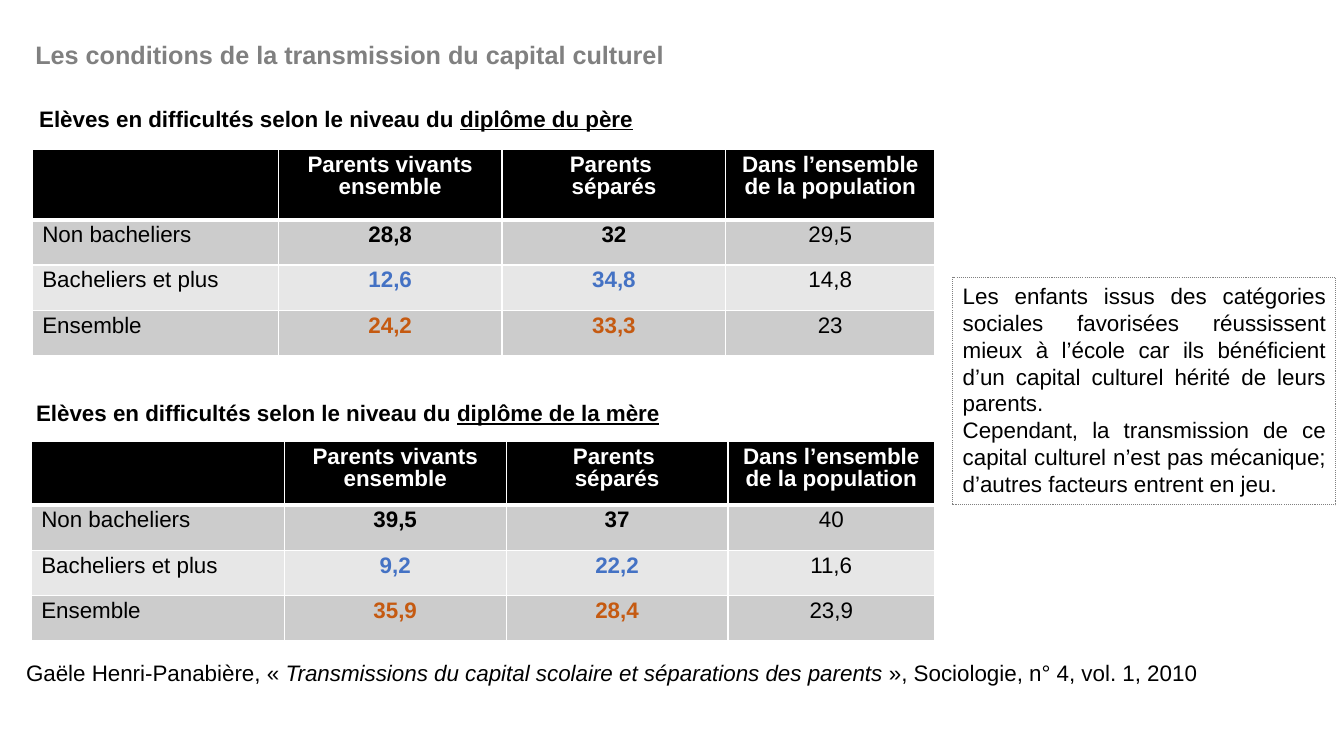
from lxml import etree
from pptx import Presentation
from pptx import util as u
from pptx.dml.color import RGBColor
from pptx.enum import dml, shapes, text
from pptx.oxml import ns

HEADERS = ["", "Parents vivants ensemble", "Parents \nséparés", "Dans l’ensemble de la population"]
LABELS = ["Non bacheliers", "Bacheliers et plus", "Ensemble"]
VALUE_COLOURS = ["000000", "4472C4", "C55A11"]
BANDS = ["CCCCCC", "E7E7E7", "CCCCCC"]
FATHER = [["28,8", "32", "29,5"], ["12,6", "34,8", "14,8"], ["24,2", "33,3", "23"]]
MOTHER = [["39,5", "37", "40"], ["9,2", "22,2", "11,6"], ["35,9", "28,4", "23,9"]]
ROW_HEIGHT = 0.45


def colour(value):
    """Turn a hex string into a colour."""
    return RGBColor.from_string(value)


def inches(box):
    """Turn a box of numbers into lengths."""
    return [u.Inches(length) for length in box]


def style(para, shade="000000", size=16, bold=False, align=text.PP_ALIGN.LEFT):
    """Set the font and alignment of a whole paragraph."""
    para.alignment = align
    para.font.name = "Arial"
    para.font.size = u.Pt(size)
    para.font.bold = bold
    para.font.color.rgb = colour(shade)


def add_title(page, box, words):
    """Move and fill the title placeholder."""
    title = page.shapes.title
    title.left, title.top, title.width, title.height = inches(box)
    title.text_frame.text = words
    title.text_frame.word_wrap = False
    style(title.text_frame.paragraphs[0], "808080", 18, True)


def add_line(page, box, parts, bold=False):
    """Add a text line from (words, underline, italic) parts."""
    frame = page.shapes.add_textbox(*inches(box)).text_frame
    frame.word_wrap = True
    para = frame.paragraphs[0]
    style(para, bold=bold)
    for words, underline, italic in parts:
        span = para.add_run()
        span.text = words
        span.font.underline = underline
        span.font.italic = italic


def add_borders(cell, bottom):
    """Draw white borders, the bottom one of a given weight."""
    props = cell._tc.get_or_add_tcPr()
    for index, (side, weight) in enumerate([("lnL", 1), ("lnR", 1), ("lnT", 1), ("lnB", bottom)]):
        line = etree.Element(ns.qn("a:" + side), w=str(u.Pt(weight)))
        fill = etree.SubElement(line, ns.qn("a:solidFill"))
        etree.SubElement(fill, ns.qn("a:srgbClr"), val="FFFFFF")
        props.insert(index, line)


def fill_cell(cell, words, fill, **font):
    """Fill one cell with styled text."""
    cell.fill.solid()
    cell.fill.fore_color.rgb = colour(fill)
    cell.text_frame.text = words
    for para in cell.text_frame.paragraphs:
        para.line_spacing = 0.9
        style(para, **font)


def add_results(page, box, widths, values):
    """Add a table of results by diploma and family situation."""
    table = page.shapes.add_table(len(LABELS) + 1, len(HEADERS), *inches(box)).table
    for column, width in zip(table.columns, widths):
        column.width = u.Inches(width)
    for row in table.rows:
        row.height = u.Inches(ROW_HEIGHT)
    table.rows[0].height = u.Inches(box[3] - ROW_HEIGHT * len(LABELS))
    centre = text.PP_ALIGN.CENTER
    for col, words in enumerate(HEADERS):
        fill_cell(table.cell(0, col), words, "000000", shade="FFFFFF", bold=True, align=centre)
        add_borders(table.cell(0, col), 3)
    for row, (label, figures) in enumerate(zip(LABELS, values), 1):
        band = BANDS[row - 1]
        fill_cell(table.cell(row, 0), label, band)
        for col, figure in enumerate(figures, 1):
            by_family = col < len(figures)
            shade = VALUE_COLOURS[row - 1] if by_family else "000000"
            fill_cell(table.cell(row, col), figure, band, shade=shade, bold=by_family, align=centre)
        for col in range(len(HEADERS)):
            add_borders(table.cell(row, col), 1)


def add_comment(page, box, paragraphs):
    """Add the dotted frame with the commentary."""
    frame = page.shapes.add_shape(shapes.MSO_SHAPE.RECTANGLE, *inches(box))
    frame.shadow.inherit = False
    frame.fill.background()
    frame.line.color.rgb = colour("808080")
    frame.line.width = u.Pt(0.75)
    frame.line.dash_style = dml.MSO_LINE.ROUND_DOT
    frame.text_frame.word_wrap = True
    frame.text_frame.vertical_anchor = text.MSO_ANCHOR.TOP
    frame.text_frame.text = "\n".join(paragraphs)
    for para in frame.text_frame.paragraphs:
        style(para, align=text.PP_ALIGN.JUSTIFY)


def main():
    """Build the slide and save the deck."""
    deck = Presentation()
    deck.slide_width, deck.slide_height = inches((13.33, 7.5))
    page = deck.slides.add_slide(deck.slide_layouts[5])
    add_title(page, (0.25, 0.34, 6.5, 0.4), "Les conditions de la transmission du capital culturel")
    subject = ("Elèves en difficultés selon le niveau du ", False, False)
    add_line(page, (0.29, 0.99, 8.4, 0.37), [subject, ("diplôme du père", True, False)], True)
    add_results(page, (0.32, 1.48, 8.96, 2.05), (2.44, 2.22, 2.22, 2.07), FATHER)
    add_line(page, (0.26, 3.91, 8.43, 0.37), [subject, ("diplôme de la mère", True, False)], True)
    add_results(page, (0.31, 4.38, 8.97, 1.98), (2.51, 2.2, 2.2, 2.05), MOTHER)
    add_line(page, (0.16, 6.49, 13.1, 0.37), [
        ("Gaële Henri-Panabière, « ", False, False),
        ("Transmissions du capital scolaire et séparations des parents", False, True),
        (" », Sociologie, n° 4, vol. 1, 2010", False, False)])
    add_comment(page, (9.45, 2.75, 3.8, 2.26), [
        "Les enfants issus des catégories sociales favorisées réussissent mieux à l’école "
        "car ils bénéficient d’un capital culturel hérité de leurs parents.",
        "Cependant, la transmission de ce capital culturel n’est pas mécanique; "
        "d’autres facteurs entrent en jeu."])
    deck.save("out.pptx")


if __name__ == "__main__":
    main()
